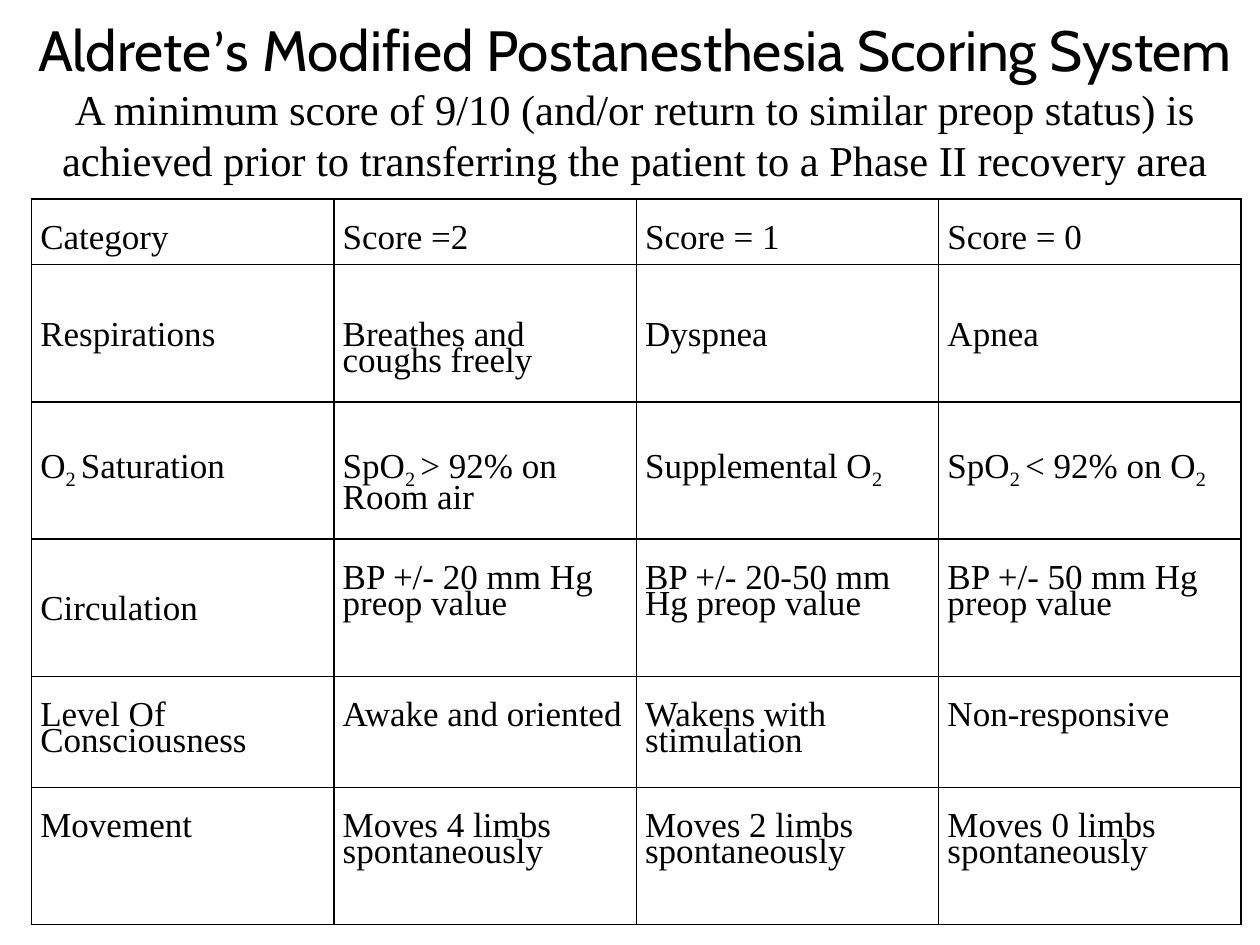
from dataclasses import dataclass

from lxml.etree import SubElement
from pptx import Presentation
from pptx.dml.color import RGBColor
from pptx.enum.text import MSO_ANCHOR, MSO_AUTO_SIZE, PP_ALIGN
from pptx.oxml.ns import qn
from pptx.util import Inches, Pt


@dataclass(frozen=True)
class Theme:
    ink: RGBColor = RGBColor(0, 0, 0)
    paper: RGBColor = RGBColor(255, 255, 255)
    heading_font: str = "Cabin"
    apostrophe_font: str = "Calibri"
    body_font: str = "Times New Roman"
    heading_size: float = 32.4
    subtitle_size: float = 24.3
    table_size: float = 20
    border_width: float = 1


THEME = Theme()

SUBTITLE = (
    "A minimum score of 9/10 (and/or return to similar preop status) is "
    "achieved prior to transferring the patient to a Phase II recovery area"
)

# Underscores enclose subscripts.
SCORES = [
    ["Category", "Score =2", "Score = 1", "Score = 0"],
    ["Respirations", "Breathes and coughs freely", "Dyspnea", "Apnea"],
    ["O_2 _Saturation", "SpO_2 _> 92% on Room air", "Supplemental O_2_",
     "SpO_2 _< 92% on O_2_"],
    ["Circulation", "BP +/- 20 mm Hg preop value",
     "BP +/- 20-50 mm Hg preop value", "BP +/- 50 mm Hg preop value"],
    ["Level Of Consciousness", "Awake and oriented",
     "Wakens with stimulation", "Non-responsive"],
    ["Movement"] + [f"Moves {limbs} limbs spontaneously" for limbs in (4, 2, 0)],
]
ROW_HEIGHTS = [0.52, 1.09, 1.09, 1.09, 0.88, 1.09]
COLUMN_WIDTH = 2.4
LINE_STEP = 0.25
LOW_ROWS = {"Respirations", "O_2 _Saturation"}
LOW_CELLS = {"Circulation"}


def add_run(paragraph, text, font_name, size):
    run = paragraph.add_run()
    run.text = text
    run.font.name = font_name
    run.font.size = Pt(size)
    run.font.color.rgb = THEME.ink
    return run


def add_title(slide):
    title = slide.shapes.title
    title.left, title.top = Inches(0.08), Inches(0.3)
    title.width, title.height = Inches(9.92), Inches(1.25)
    frame = title.text_frame
    frame.word_wrap = True
    frame.auto_size = MSO_AUTO_SIZE.NONE
    frame.vertical_anchor = MSO_ANCHOR.MIDDLE
    frame.margin_top, frame.margin_bottom = Inches(0.05), Inches(0.31)

    heading = frame.paragraphs[0]
    for text, font_name in (
        ("Aldrete", THEME.heading_font),
        ("’", THEME.apostrophe_font),
        ("s Modified Postanesthesia Scoring System", THEME.heading_font),
    ):
        add_run(heading, text, font_name, THEME.heading_size)
    subtitle = frame.add_paragraph()
    add_run(subtitle, SUBTITLE, THEME.body_font, THEME.subtitle_size)
    for paragraph in frame.paragraphs:
        paragraph.alignment = PP_ALIGN.CENTER


def set_borders(cell):
    properties = cell._tc.get_or_add_tcPr()
    for position, side in enumerate(("a:lnL", "a:lnR", "a:lnT", "a:lnB")):
        line = SubElement(properties, qn(side), w=str(Pt(THEME.border_width)))
        fill = SubElement(line, qn("a:solidFill"))
        SubElement(fill, qn("a:srgbClr"), val=str(THEME.ink))
        properties.insert(position, line)


def fill_cell(cell, text, steps):
    """Write the text a number of line steps below the top of the cell."""
    cell.margin_left = cell.margin_right = Inches(0.07)
    cell.margin_top, cell.margin_bottom = Inches(steps * LINE_STEP), 0
    cell.vertical_anchor = MSO_ANCHOR.TOP
    cell.fill.solid()
    cell.fill.fore_color.rgb = THEME.paper
    set_borders(cell)
    paragraph = cell.text_frame.paragraphs[0]
    paragraph.line_spacing = Pt(15)
    paragraph.space_after = Pt(3)
    for index, part in enumerate(text.split("_")):
        if part:
            run = add_run(paragraph, part, THEME.body_font, THEME.table_size)
            if index % 2:
                run._r.get_or_add_rPr().set("baseline", "-25000")


def add_score_table(slide):
    columns = len(SCORES[0])
    table = slide.shapes.add_table(
        len(SCORES), columns, Inches(0.25), Inches(1.58),
        Inches(columns * COLUMN_WIDTH), Inches(sum(ROW_HEIGHTS)),
    ).table
    table.first_row = table.horz_banding = False
    for column in table.columns:
        column.width = Inches(COLUMN_WIDTH)
    for row_index, (height, texts) in enumerate(zip(ROW_HEIGHTS, SCORES)):
        table.rows[row_index].height = Inches(height)
        for column_index, text in enumerate(texts):
            low = texts[0] in LOW_ROWS or text in LOW_CELLS
            fill_cell(table.cell(row_index, column_index), text, 2 if low else 1)


def main():
    presentation = Presentation()
    presentation.slide_width, presentation.slide_height = Inches(10), Inches(7.5)
    slide = presentation.slides.add_slide(presentation.slide_layouts[5])
    add_title(slide)
    add_score_table(slide)
    presentation.save("out.pptx")


if __name__ == "__main__":
    main()
